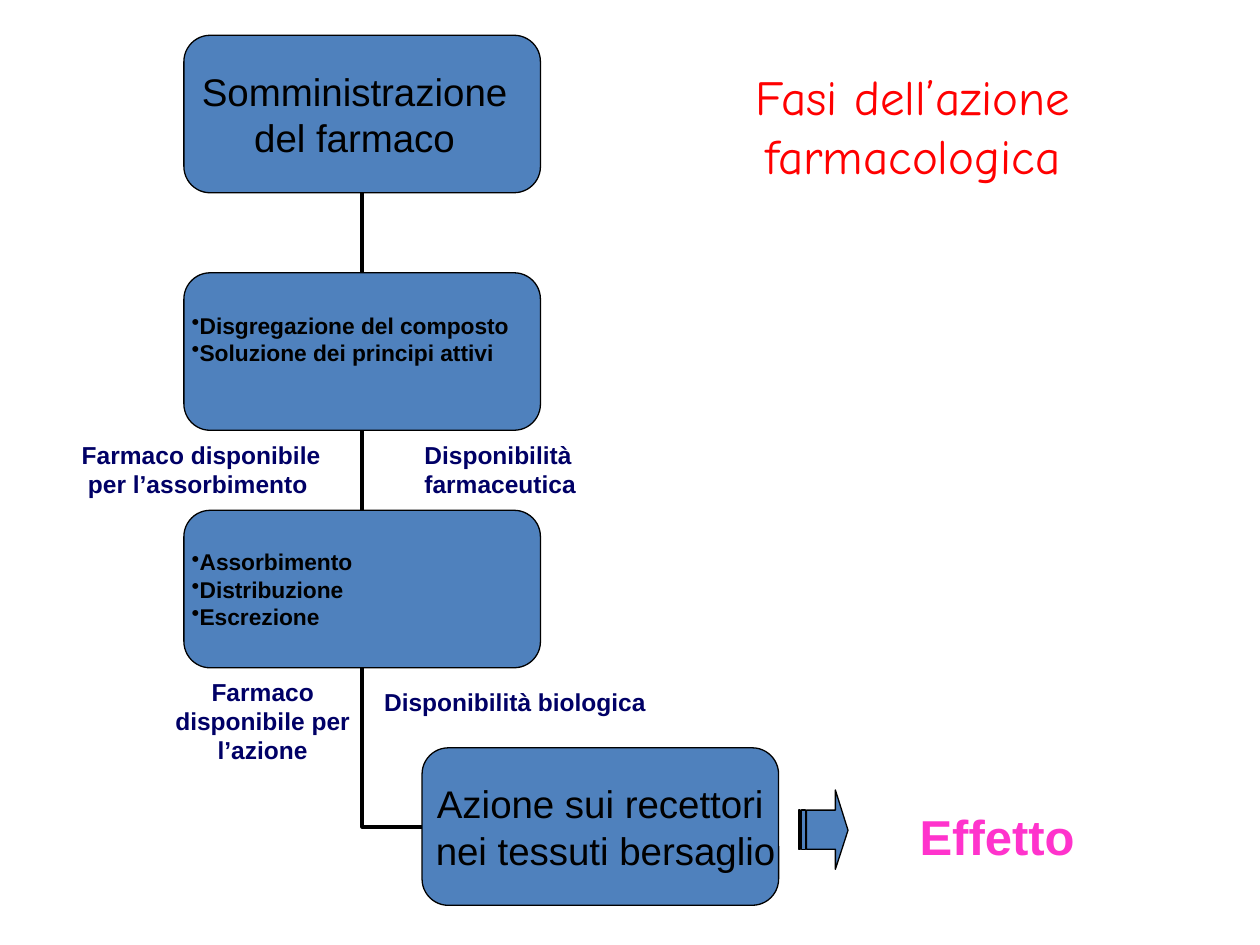
from lxml import etree
from pptx import Presentation
from pptx.dml.color import RGBColor
from pptx.enum.shapes import MSO_CONNECTOR, MSO_SHAPE
from pptx.enum.text import MSO_ANCHOR, PP_ALIGN
from pptx.oxml.ns import qn
from pptx.util import Inches, Pt

ROUNDED = MSO_SHAPE.ROUNDED_RECTANGLE
STRAIGHT, ELBOW = MSO_CONNECTOR.STRAIGHT, MSO_CONNECTOR.ELBOW
LEFT, CENTER = PP_ALIGN.LEFT, PP_ALIGN.CENTER
MIDDLE, TOP = MSO_ANCHOR.MIDDLE, MSO_ANCHOR.TOP

# Grid of 100 columns by 75 rows; flow boxes repeat at one step
COLUMNS, ROWS = 100, 75
BOX_WIDTH, BOX_HEIGHT = 28.3, 12.5
BOX_LEFT, BOX_TOP, STEP = 14.6, 2.8, 18.85
AXIS = BOX_LEFT + BOX_WIDTH / 2


def color(value):
    return RGBColor.from_string(value)


def write(frame, lines, size=14, font="Arial", fill="000000", bold=False,
          align=LEFT, anchor=TOP, bullet=None):
    frame.vertical_anchor = anchor
    for index, line in enumerate(lines):
        para = frame.add_paragraph() if index else frame.paragraphs[0]
        para.alignment = align
        if bullet:
            properties = para._p.get_or_add_pPr()
            properties.set("marL", "0")
            properties.set("indent", "0")
            etree.SubElement(properties, qn("a:buChar")).set("char", bullet)
        span = para.add_run()
        span.text = line
        span.font.size, span.font.name, span.font.bold = Pt(size), font, bold
        span.font.color.rgb = color(fill)


class FlowSlide:
    blue, black, navy = "4F81BD", "000000", "000066"

    def __init__(self, deck):
        self.deck = deck
        self.page = deck.slides.add_slide(deck.slide_layouts[5])
        self.shapes = self.page.shapes

    def x(self, columns):
        return round(self.deck.slide_width * columns / COLUMNS)

    def y(self, rows):
        return round(self.deck.slide_height * rows / ROWS)

    def area(self, left, top, width, height):
        return self.x(left), self.y(top), self.x(width), self.y(height)

    def paint(self, shape):
        shape.shadow.inherit = False
        shape.fill.solid()
        shape.fill.fore_color.rgb = color(self.blue)
        shape.line.color.rgb = color(self.black)
        shape.line.width = Pt(0.75)

    def title(self, text, *area):
        title = self.shapes.title
        title.left, title.top, title.width, title.height = self.area(*area)
        title.text_frame.word_wrap = True
        write(title.text_frame, [text], size=28, font="Comic Neue",
              fill="FF0000", align=CENTER, anchor=MIDDLE)

    def box(self, step, lines, left=BOX_LEFT, right_inset=0, bottom_inset=0,
            **style):
        area = self.area(left, BOX_TOP + step * STEP, BOX_WIDTH, BOX_HEIGHT)
        box = self.shapes.add_shape(ROUNDED, *area)
        box.adjustments[0] = 0.167
        self.paint(box)
        frame = box.text_frame
        frame.word_wrap = False
        frame.margin_left = frame.margin_top = 0
        frame.margin_right = self.x(right_inset)
        frame.margin_bottom = self.y(bottom_inset)
        write(frame, lines, anchor=MIDDLE, **style)

    def line(self, kind, start, end):
        line = self.shapes.add_connector(
            kind, self.x(start[0]), self.y(start[1]),
            self.x(end[0]), self.y(end[1]))
        line.line.color.rgb = color(self.black)
        line.line.width = Pt(2.25)
        etree.SubElement(line._element.spPr, qn("a:effectLst"))
        return line

    def corner(self, start, end):
        properties = self.line(ELBOW, start, end)._element.spPr
        properties.find(qn("a:prstGeom")).set("prst", "bentConnector2")
        properties.find(qn("a:xfrm")).set("rot", "10800000")

    def label(self, text, *area, **style):
        label = self.shapes.add_textbox(*self.area(*area))
        label.text_frame.word_wrap = True
        write(label.text_frame, [text], **{"fill": self.navy, "bold": True, **style})

    def outline(self, *contours):
        paths = [[(self.x(x), self.y(y)) for x, y in contour] for contour in contours]
        builder = self.shapes.build_freeform(*paths[0][0])
        for index, points in enumerate(paths):
            if index:
                builder.move_to(*points[0])
            builder.add_line_segments(points[1:], close=True)
        self.paint(builder.convert_to_shape())


def bar(left, right, top=64.3, bottom=67.4):
    return [(left, top), (left, bottom), (right, bottom), (right, top)]


def main():
    deck = Presentation()
    deck.slide_width, deck.slide_height = Inches(10), Inches(7.5)
    flow = FlowSlide(deck)
    flow.title("Fasi dell’azione farmacologica", 55.5, 2.1, 33.9, 15.7)

    # Lines between the steps
    last_left = 33.5
    flow.corner((AXIS, BOX_TOP + 2 * STEP + BOX_HEIGHT),
                (last_left, BOX_TOP + 3 * STEP + BOX_HEIGHT / 2))
    for step in (1, 0):
        flow.line(STRAIGHT, (AXIS, BOX_TOP + (step + 1) * STEP),
                  (AXIS, BOX_TOP + step * STEP + BOX_HEIGHT))

    # Steps
    heading = {"size": 22, "align": CENTER}
    listing = {"size": 13, "bold": True, "bullet": "•"}
    flow.box(0, ["Somministrazione", "del farmaco"], right_inset=1.2, **heading)
    flow.box(1, ["Disgregazione del composto", "Soluzione dei principi attivi"],
             bottom_inset=2, **listing)
    flow.box(2, ["Assorbimento", "Distribuzione", "Escrezione"], **listing)
    flow.box(3, ["Azione sui recettori", " nei tessuti bersaglio"],
             left=last_left, **heading)

    # Striped arrow to the effect
    flow.outline(
        [(66.3, 62.7), (66.3, 64.3), (64, 64.3), (64, 67.4),
         (66.3, 67.4), (66.3, 69), (67.3, 65.9)],
        bar(63.6, 63.9), bar(63.4, 63.5))
    flow.label("Effetto", 72, 63.5, 22.8, 5.7, size=28, fill="FF33CC")

    # Labels beside the lines
    flow.label(" Farmaco disponibile per l’assorbimento",
               4.3, 34.4, 22.8, 5.7, align=CENTER)
    flow.label("Disponibilità farmaceutica", 32.7, 34.4, 23.6, 5.7)
    flow.label("Farmaco disponibile per l’azione",
               10.6, 53.2, 20.5, 8.1, align=CENTER)
    flow.label("Disponibilità biologica", 29.5, 54, 33.1, 3.3)

    deck.save("out.pptx")


if __name__ == "__main__":
    main()
